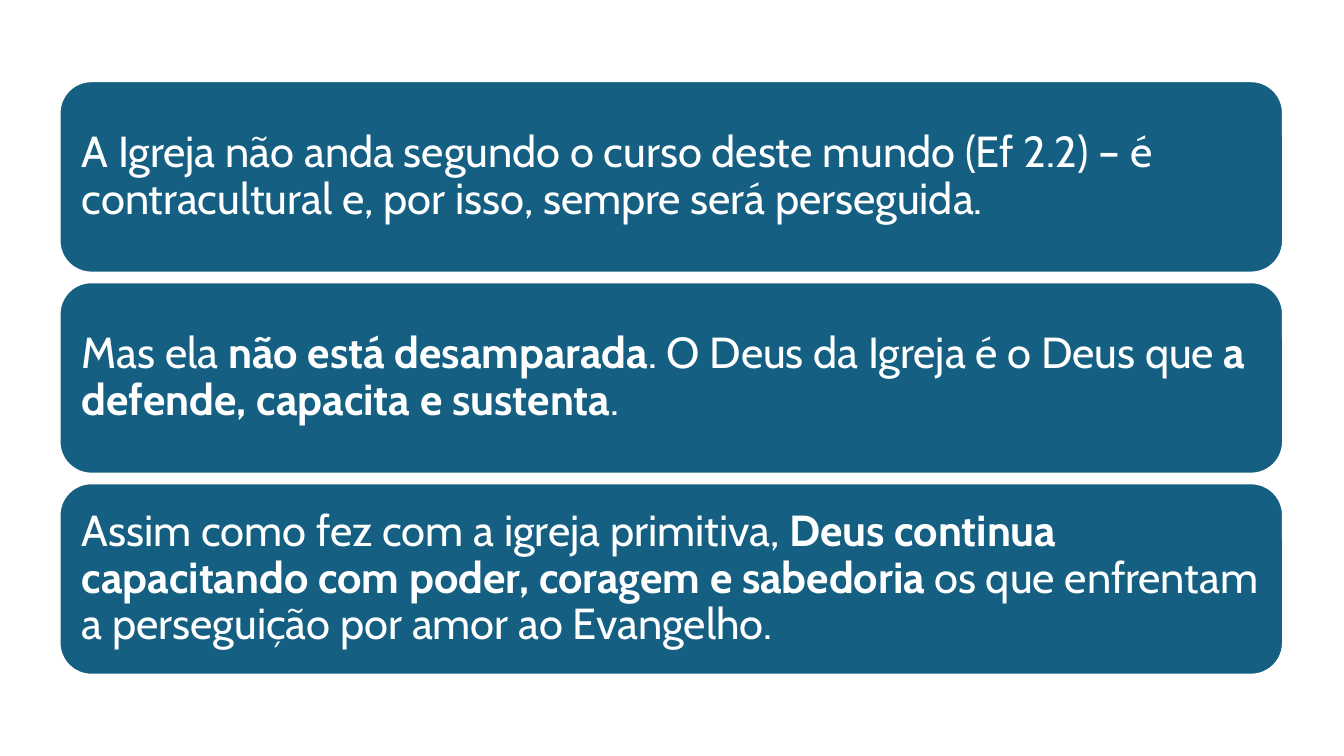
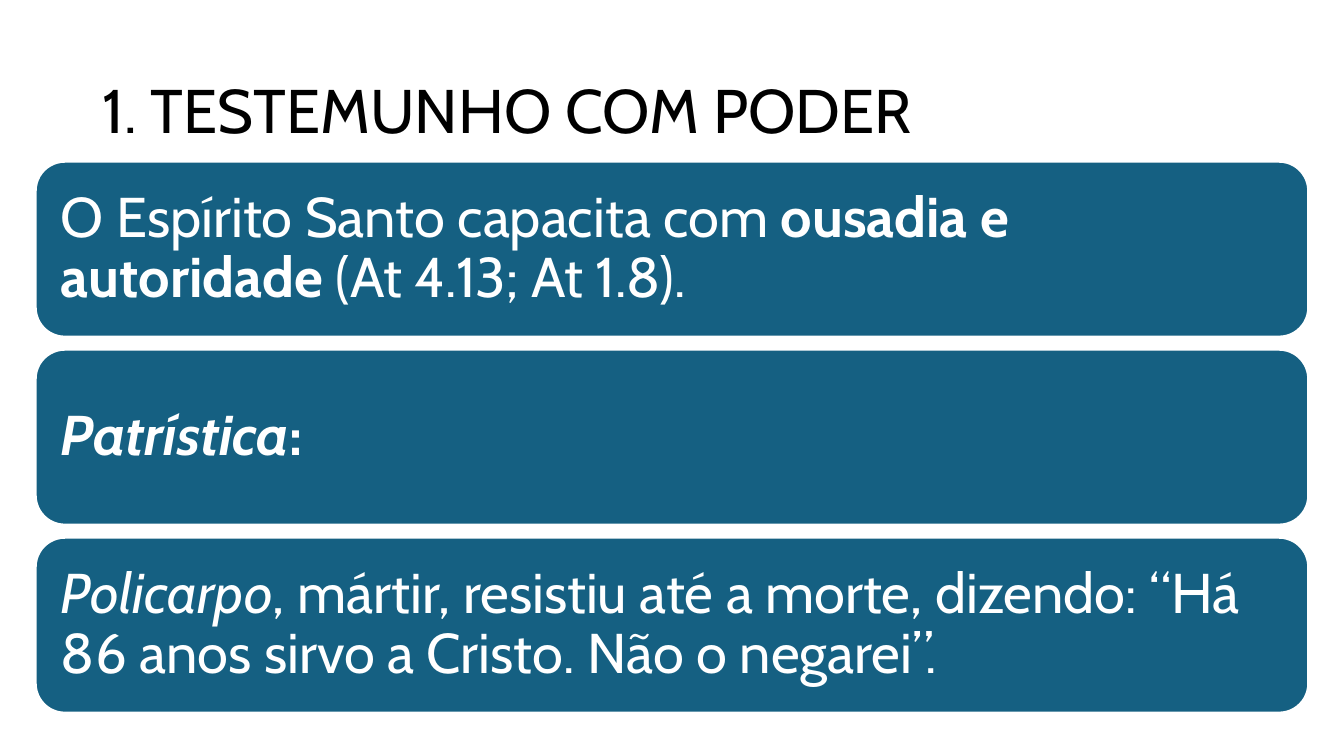
"""Builds two slides of stacked rounded cards about the witness of the Church."""
from pptx import Presentation
from pptx.dml.color import RGBColor
from pptx.enum.shapes import MSO_SHAPE
from pptx.enum.text import MSO_ANCHOR, PP_ALIGN
from pptx.util import Pt

COLORS = {"card": "156082", "white": "FFFFFF", "title": "000000"}
FONT = "Cabin"
TITLE_ONLY, BLANK = 5, 6

SLIDES = [
    {
        "title": None,
        "left": 42.5, "top": 58, "width": 874, "height": 136.8, "step": 143.6,
        "inset": 9.3, "size": 31,
        "cards": [
            [("A Igreja não anda segundo o curso deste mundo (Ef 2.2) – é "
              "contracultural e, por isso, sempre será perseguida.", "")],
            [("Mas ela ", ""), ("não está desamparada", "b"),
             (". O Deus da Igreja é o Deus que ", ""),
             ("a defende, capacita e sustenta", "b"), (".", "")],
            [("Assim como fez com a igreja primitiva, ", ""),
             ("Deus continua capacitando com poder, coragem e sabedoria", "b"),
             (" os que enfrentam a perseguição por amor ao Evangelho.", "")],
        ],
    },
    {
        "title": "1. TESTEMUNHO COM PODER",
        "left": 25.5, "top": 115.5, "width": 909, "height": 125, "step": 134.3,
        "inset": 12, "size": 40,
        "cards": [
            [("O Espírito Santo capacita com ", ""), ("ousadia e autoridade", "b"),
             (" (At 4.13; At 1.8).", "")],
            [("Patrística", "bi"), (":", "b")],
            [("Policarpo", "i"),
             (", mártir, resistiu até a morte, dizendo: “Há 86 anos sirvo a "
              "Cristo. Não o negarei”.", "")],
        ],
    },
]


def rgb(name):
    return RGBColor.from_string(COLORS[name])


def style(p, size, color):
    p.alignment = PP_ALIGN.LEFT
    p.line_spacing = 0.9
    p.font.name = FONT
    p.font.size = Pt(size)
    p.font.color.rgb = rgb(color)


prs = Presentation()
prs.slide_width, prs.slide_height = Pt(960), Pt(540)

for data in SLIDES:
    layout = TITLE_ONLY if data["title"] else BLANK
    s = prs.slides.add_slide(prs.slide_layouts[layout])

    if data["title"]:
        title = s.shapes.title
        title.left, title.top = Pt(66), Pt(28.75)
        title.width, title.height = Pt(828), Pt(104.4)
        tf = title.text_frame
        tf.text = data["title"]
        tf.vertical_anchor = MSO_ANCHOR.MIDDLE
        style(tf.paragraphs[0], 44, "title")

    for i, runs in enumerate(data["cards"]):
        sp = s.shapes.add_shape(
            MSO_SHAPE.ROUNDED_RECTANGLE,
            Pt(data["left"]), Pt(data["top"] + i * data["step"]),
            Pt(data["width"]), Pt(data["height"]))
        sp.shadow.inherit = False
        sp.fill.solid()
        sp.fill.fore_color.rgb = rgb("card")
        sp.line.color.rgb = rgb("white")
        sp.line.width = Pt(1.5)
        tf = sp.text_frame
        tf.word_wrap = True
        tf.vertical_anchor = MSO_ANCHOR.MIDDLE
        tf.margin_left = tf.margin_right = Pt(data["inset"])
        tf.margin_top = tf.margin_bottom = Pt(data["inset"])
        p = tf.paragraphs[0]
        style(p, data["size"], "white")
        for text, emphasis in runs:
            r = p.add_run()
            r.text = text
            r.font.bold = "b" in emphasis
            r.font.italic = "i" in emphasis

prs.save("out.pptx")
